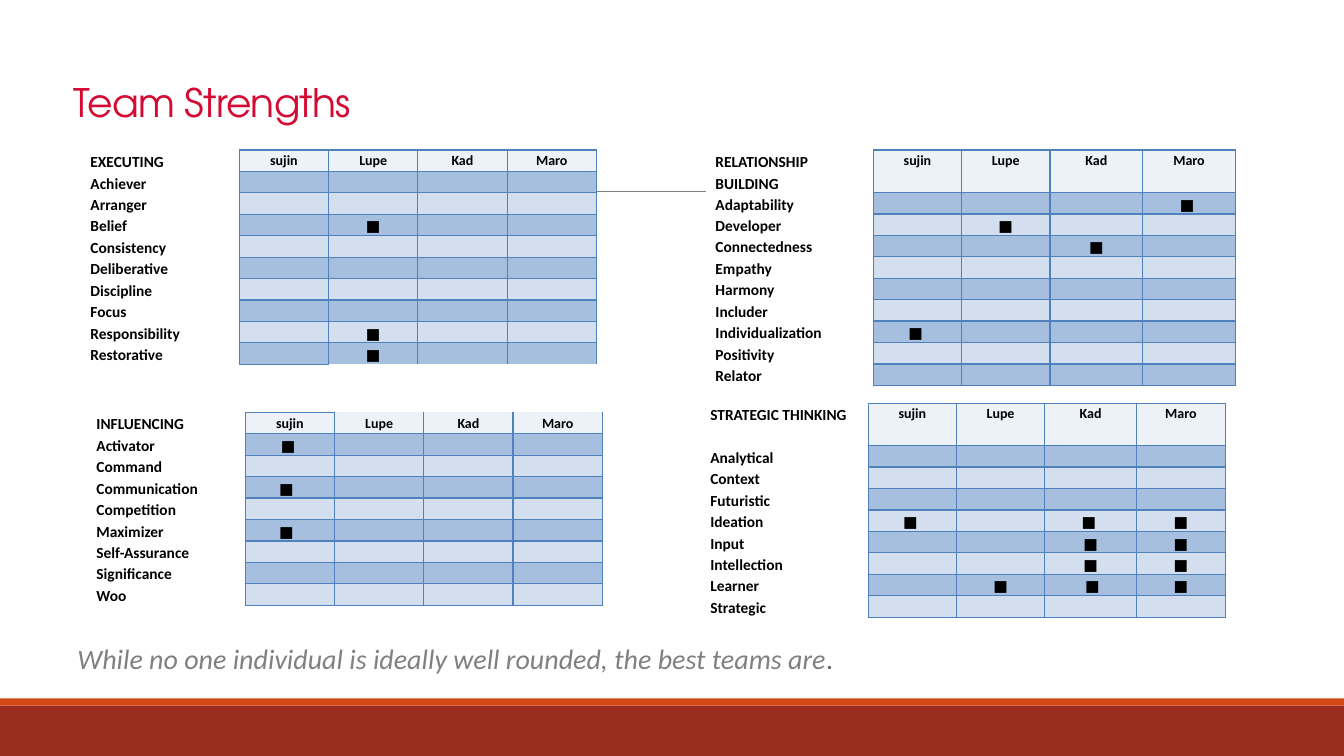
import pptx
import pptx.dml.color
import pptx.enum.shapes
import pptx.enum.text
import pptx.oxml
import pptx.oxml.ns
import pptx.util
from lxml import etree

Cm, Pt = pptx.util.Cm, pptx.util.Pt
PEOPLE = ["sujin", "Lupe", "Kad", "Maro"]

# Each theme: left, top, column widths, header height, open edge, strengths with marks by column
THEMES = {
    "EXECUTING": (2.03, 3.78, [4, 2.25, 2.25, 2.25, 2.25], 0.54, "B", {
        "Achiever": {}, "Arranger": {}, "Belief": {2: "■"}, "Consistency": {},
        "Deliberative": {}, "Discipline": {}, "Focus": {},
        "Responsibility": {2: "■"}, "Restorative": {2: "■"}}),
    "INFLUENCING": (2.18, 10.39, [4, 2.25, 2.25, 2.25, 2.25], 0.54, "T", {
        "Activator": {1: "■ "}, "Command": {}, "Communication": {1: "■  "},
        "Competition": {}, "Maximizer": {1: "■  "}, "Self-Assurance": {},
        "Significance": {}, "Woo": {}}),
    "RELATIONSHIP BUILDING": (17.78, 3.78, [4.23, 2.22, 2.23, 2.34, 2.33], 1.07, "", {
        "Adaptability": {4: "■ "}, "Developer": {2: "■"}, "Connectedness": {3: "■"},
        "Empathy": {}, "Harmony": {}, "Includer": {}, "Individualization": {1: "■ "},
        "Positivity": {}, "Relator": {}}),
    "STRATEGIC THINKING": (17.65, 10.16, [4.23, 2.22, 2.23, 2.31, 2.24], 1.07, "", {
        "Analytical": {}, "Context": {}, "Futuristic": {},
        "Ideation": {1: "■ ", 3: "■ ", 4: "■"}, "Input": {3: "■", 4: "■"},
        "Intellection": {3: " ■ ", 4: "■"}, "Learner": {2: "■", 3: " ■", 4: "■"},
        "Strategic": {}}),
}


def rgb(value):
    return pptx.dml.color.RGBColor.from_string(value)


class Deck:
    font = "Calibri"
    grid = "4F81BD"
    header, bands = "EDF2F8", ["A7BFDE", "D3DFEE"]
    row_height = 0.54

    def __init__(self):
        self.prs = pptx.Presentation()
        self.prs.slide_width, self.prs.slide_height = Cm(33.87), Cm(19.05)
        self.s = self.prs.slides.add_slide(self.prs.slide_layouts[5])

    def style(self, r, size, color, bold=False, italic=False, font=None):
        f = r.font
        f.name, f.size, f.bold, f.italic = font or self.font, Pt(size), bold, italic
        f.color.rgb = rgb(color)

    def title(self, text):
        sp = self.s.shapes.title
        sp.left, sp.top, sp.width, sp.height = Cm(1.6), Cm(0.41), Cm(30.48), Cm(2.87)
        tf = sp.text_frame
        tf.text = text
        tf.auto_size = pptx.enum.text.MSO_AUTO_SIZE.NONE
        tf.vertical_anchor = pptx.enum.text.MSO_ANCHOR.BOTTOM
        p = tf.paragraphs[0]
        p.alignment, p.line_spacing = pptx.enum.text.PP_ALIGN.LEFT, 0.85
        r = p.runs[0]
        self.style(r, 28, "D40A33", font="TeX Gyre Adventor")
        r.font._element.set("spc", "-50")

    def bar(self, top, height, color):
        sp = self.s.shapes.add_shape(pptx.enum.shapes.MSO_SHAPE.RECTANGLE,
                                     0, Cm(top), self.prs.slide_width, Cm(height))
        sp.shadow.inherit = False
        sp.fill.solid()
        sp.fill.fore_color.rgb = rgb(color)
        sp.line.fill.background()

    def rule(self, left, right, y):
        line = self.s.shapes.add_connector(pptx.enum.shapes.MSO_CONNECTOR.STRAIGHT,
                                           Cm(left), Cm(y), Cm(right), Cm(y))
        line.line.color.rgb, line.line.width = rgb("808080"), Pt(0.5)
        etree.SubElement(line._element.spPr, pptx.oxml.ns.qn("a:effectLst"))

    def caption(self, text, end):
        sp = self.s.shapes.add_textbox(Cm(1.7), Cm(16.03), Cm(19.91), Cm(1.11))
        tf = sp.text_frame
        tf.word_wrap = False
        tf.auto_size = pptx.enum.text.MSO_AUTO_SIZE.SHAPE_TO_FIT_TEXT
        p = tf.paragraphs[0]
        for part, color in ((text, "808080"), (end, "696464")):
            r = p.add_run()
            r.text = part
            self.style(r, 20, color, italic=True)

    def borders(self, cell, sides):
        """Draw the named sides (L, R, T, B) and clear the others."""
        tc_pr = cell._tc.get_or_add_tcPr()
        for side in "LRTB":
            paint = (f'<a:solidFill><a:srgbClr val="{self.grid}"/></a:solidFill>'
                     if side in sides else "<a:noFill/>")
            tc_pr.append(pptx.oxml.parse_xml(
                f'<a:ln{side} {pptx.oxml.ns.nsdecls("a")} w="12700">{paint}</a:ln{side}>'))

    def cell(self, cell, text, fill, sides, size=11, bold=False, centered=True):
        cell.margin_left = cell.margin_right = Cm(0.25)
        cell.margin_top = cell.margin_bottom = 0
        self.borders(cell, sides)
        cell.fill.solid()
        cell.fill.fore_color.rgb = rgb(fill)
        p = cell.text_frame.paragraphs[0]
        if not text:
            # Keeps an empty cell from growing to the default text size
            etree.SubElement(p._p, pptx.oxml.ns.qn("a:endParaRPr"), sz="1000")
            return
        p.text = text
        p.line_spacing = 1.15
        if centered:
            p.alignment = pptx.enum.text.PP_ALIGN.CENTER
        self.style(p.runs[0], size, "000000", bold)

    def strengths(self, name, left, top, widths, header_height, open_edge, rows):
        heights = [header_height] + [self.row_height] * len(rows)
        table = self.s.shapes.add_table(len(heights), len(widths), Cm(left), Cm(top),
                                        Cm(sum(widths)), Cm(sum(heights))).table
        table.first_row = table.horz_banding = False
        for column, width in zip(table.columns, widths):
            column.width = Cm(width)
        for row, height in zip(table.rows, heights):
            row.height = Cm(height)
        open_row = {"T": 0, "B": len(rows)}.get(open_edge)
        for i, label in enumerate([name, *rows]):
            self.cell(table.cell(i, 0), label, "FFFFFF", "R", bold=True, centered=False)
            for j, person in enumerate(PEOPLE, 1):
                sides = "LRTB"
                if i == open_row and j > 1:
                    sides = sides.replace(open_edge, "")
                if i == 0:
                    self.cell(table.cell(i, j), person, self.header, sides, 10, True)
                else:
                    self.cell(table.cell(i, j), rows[label].get(j, ""),
                              self.bands[(i - 1) % 2], sides)


def main():
    deck = Deck()
    deck.bar(17.78, 1.27, "9B2D1F")
    deck.bar(17.6, 0.18, "D34817")
    deck.rule(3.33, 31.01, 4.83)
    deck.title("Team Strengths")
    deck.caption("While no one individual is ideally well rounded, the best teams are", ".")
    for name, theme in THEMES.items():
        deck.strengths(name, *theme)
    deck.prs.save("out.pptx")


if __name__ == "__main__":
    main()
